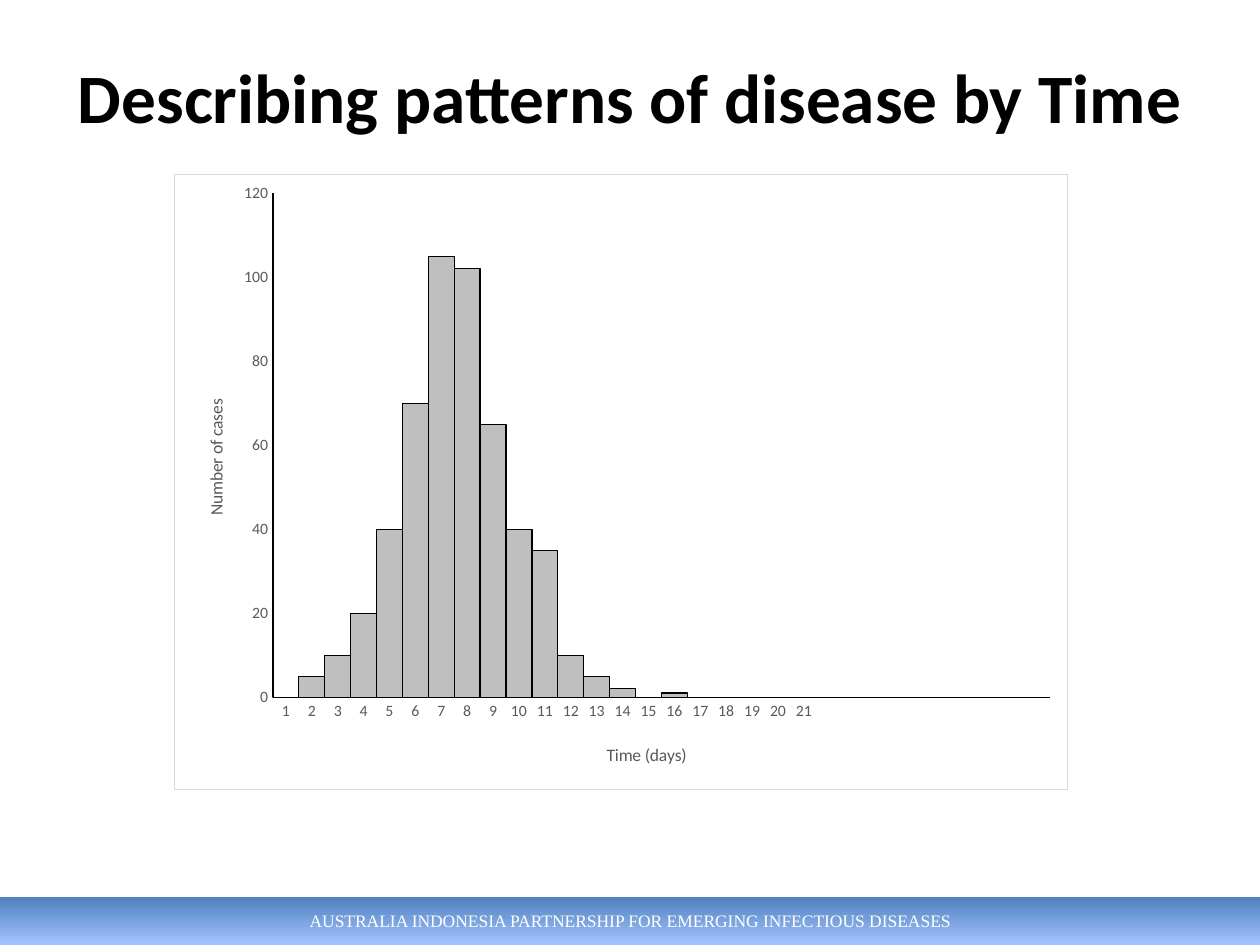
from lxml.etree import tostring
from pptx import Presentation
from pptx.chart.data import CategoryChartData
from pptx.dml.color import RGBColor
from pptx.enum.chart import XL_CHART_TYPE, XL_TICK_MARK
from pptx.enum.shapes import MSO_SHAPE
from pptx.enum.text import MSO_ANCHOR, PP_ALIGN
from pptx.oxml import parse_xml
from pptx.oxml.ns import nsdecls, qn
from pptx.util import Cm, Pt

COLORS = {
    "black": "000000", "white": "FFFFFF", "gray": "595959", "bar": "BFBFBF",
    "border": "D9D9D9", "blue": "4F81BD", "light_blue": "A4C4FF",
}


def rgb(name):
    return RGBColor.from_string(COLORS[name])


def set_layout(parent, index, **values):
    """Place a chart part by fractions of the chart area."""
    for old in parent.findall(qn("c:layout")):
        parent.remove(old)
    modes = "".join(f'<c:{k}Mode val="edge"/>' for k in "xy")
    sizes = "".join(f'<c:{k} val="{v}"/>' for k, v in values.items())
    target = '<c:layoutTarget val="inner"/>' if "w" in values else ""
    parent.insert(index, parse_xml(
        f'<c:layout {nsdecls("c")}><c:manualLayout>{target}{modes}{sizes}'
        '</c:manualLayout></c:layout>'))


prs = Presentation()
prs.slide_width, prs.slide_height = Cm(25.4), Cm(19.05)
s = prs.slides.add_slide(prs.slide_layouts[5])

# Footer band
sp = s.shapes.add_shape(MSO_SHAPE.RECTANGLE, 0, Cm(18.08), prs.slide_width, Cm(0.97))
sp.shadow.inherit = False
sp.line.fill.background()
sp.fill.gradient()
sp.fill.gradient_angle = 270
for stop, name, position in zip(sp.fill.gradient_stops, ("blue", "light_blue"), (0, 1)):
    stop.color.rgb = rgb(name)
    stop.position = position
tf = sp.text_frame
tf.text = "AUSTRALIA INDONESIA PARTNERSHIP FOR EMERGING INFECTIOUS DISEASES"
tf.vertical_anchor = MSO_ANCHOR.MIDDLE
p = tf.paragraphs[0]
p.alignment = PP_ALIGN.CENTER
font = p.runs[0].font
font.name, font.size = "Times New Roman", Pt(10)
font.color.rgb = rgb("white")

# Title
title = s.shapes.title
title.left, title.top, title.width, title.height = Cm(1.27), Cm(0.76), Cm(22.86), Cm(2.36)
tf = title.text_frame
tf.text = "Describing patterns of disease by Time"
tf.vertical_anchor = MSO_ANCHOR.MIDDLE
p = tf.paragraphs[0]
p.alignment = PP_ALIGN.CENTER
font = p.runs[0].font
font.name, font.size, font.bold = "Calibri", Pt(39.6), True
font.color.rgb = rgb("black")

# Epidemic curve: 30 day slots, the first 21 labelled
cases = [0, 5, 10, 20, 40, 70, 105, 102, 65, 40, 35, 10, 5, 2, 0, 1] + [0] * 5
spare = 30 - len(cases)
data = CategoryChartData()
data.categories = [str(day) for day in range(1, len(cases) + 1)] + [""] * spare
data.add_series("Series 1", cases + [None] * spare)
chart = s.shapes.add_chart(XL_CHART_TYPE.COLUMN_CLUSTERED, Cm(3.51), Cm(3.51),
                           Cm(18.03), Cm(12.42), data).chart
chart.has_legend = False
chart.has_title = False
chart.font.name, chart.font.size = "Calibri", Pt(10)
chart.font.color.rgb = rgb("black")

# Histogram bars
plot = chart.plots[0]
plot.gap_width, plot.overlap = 0, 100
plot.vary_by_categories = False
bars = plot.series[0].format
bars.fill.solid()
bars.fill.fore_color.rgb = rgb("bar")
bars.line.color.rgb = rgb("black")
bars.line.width = Pt(0.75)

# Axes and their titles
for axis, text, x, y in ((chart.category_axis, "Time (days)", 0.48, 0.92),
                         (chart.value_axis, "Number of cases", 0.03, 0.36)):
    axis.has_major_gridlines = False
    axis.major_tick_mark = axis.minor_tick_mark = XL_TICK_MARK.NONE
    axis.format.line.color.rgb = rgb("black")
    axis.format.line.width = Pt(0.75)
    axis.axis_title.text_frame.text = text
    title_font = axis.axis_title.text_frame.paragraphs[0].runs[0].font
    for font, size in ((axis.tick_labels.font, 9), (title_font, 10)):
        font.name, font.size, font.bold = "Calibri", Pt(size), False
        font.color.rgb = rgb("gray")
    set_layout(axis.axis_title.element, 1, x=x, y=y)
axis = chart.value_axis
axis.minimum_scale, axis.maximum_scale, axis.major_unit = 0, 120, 20

# Plot position and chart frame
space = chart.element
set_layout(space.find(".//" + qn("c:plotArea")), 0, x=0.11, y=0.03, w=0.87, h=0.82)
space.find(qn("c:chart")).addnext(parse_xml(
    f'<c:spPr {nsdecls("c", "a")}>'
    f'<a:solidFill><a:srgbClr val="{COLORS["white"]}"/></a:solidFill>'
    f'<a:ln w="{Pt(0.75)}"><a:solidFill><a:srgbClr val="{COLORS["border"]}"/>'
    '</a:solidFill></a:ln></c:spPr>'))

prs.save("out.pptx")
